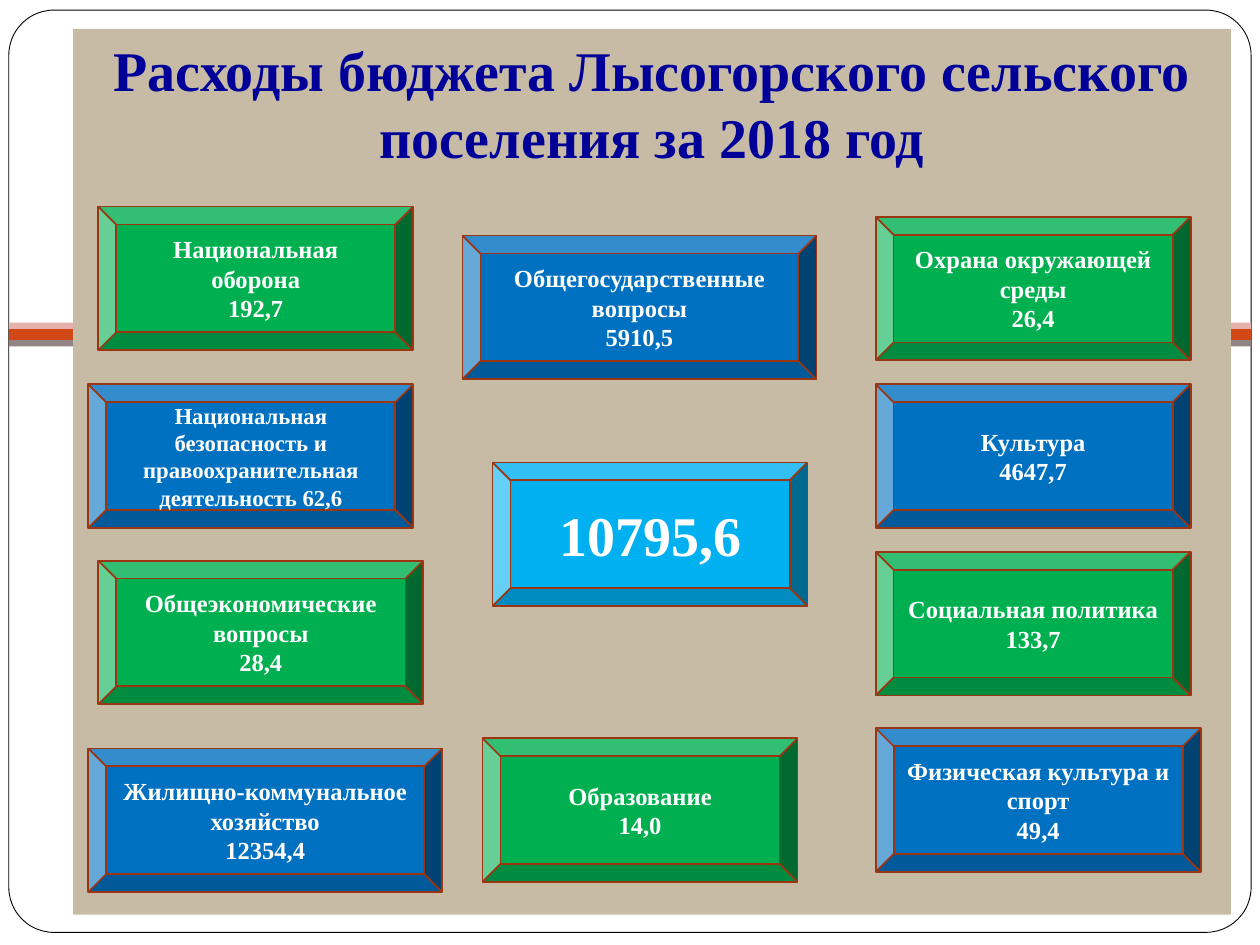
from pptx import Presentation
from pptx.dml.color import RGBColor
from pptx.enum.shapes import MSO_SHAPE
from pptx.enum.text import MSO_ANCHOR, PP_ALIGN
from pptx.util import Inches, Pt

GREEN, BLUE, SKY = "00B050", "0070C0", "00B0F0"
BEVEL_HEIGHT = 1.14
BEVELS = [
    (0.78, 1.64, 2.5, GREEN, 14, "Национальная оборона\n192,7"),
    (0.7, 3.05, 2.58, BLUE, 13,
     "Национальная безопасность и правоохранительная деятельность 62,6"),
    (0.78, 4.45, 2.58, GREEN, 14, "Общеэкономические вопросы\n28,4"),
    (0.7, 5.94, 2.81, BLUE, 14, "Жилищно-коммунальное хозяйство\n12354,4"),
    (3.91, 3.67, 2.5, SKY, 32, "10795,6"),
    (3.67, 1.87, 2.81, BLUE, 14, "Общегосударственные вопросы\n5910,5"),
    (6.95, 5.78, 2.58, BLUE, 14, "Физическая культура и спорт\n49,4"),
    (6.95, 4.38, 2.5, GREEN, 14, "Социальная политика\n133,7"),
    (6.95, 3.05, 2.5, BLUE, 14, "Культура\n4647,7"),
    (6.95, 1.72, 2.5, GREEN, 14, "Охрана окружающей среды\n26,4"),
    (3.83, 5.86, 2.5, GREEN, 14, "Образование\n14,0"),
]


def color(value):
    """Turn a hex string into a colour."""
    return RGBColor.from_string(value)


def add_box(slide, kind, box, fill, line=None, width=1):
    """Add a flat filled shape in a box of left, top, width, height."""
    shape = slide.shapes.add_shape(kind, *map(Inches, box))
    shape.shadow.inherit = False
    shape.fill.solid()
    shape.fill.fore_color.rgb = color(fill)
    if line:
        shape.line.color.rgb = color(line)
        shape.line.width = Pt(width)
    else:
        shape.line.fill.background()
    return shape


def set_text(shape, text, size, font_color, anchor):
    """Write bold centred text in a shape."""
    frame = shape.text_frame
    frame.word_wrap = True
    frame.vertical_anchor = anchor
    frame.text = text
    for para in frame.paragraphs:
        para.alignment = PP_ALIGN.CENTER
        for span in para.runs:
            span.font.name = "Times New Roman"
            span.font.size = Pt(size)
            span.font.bold = True
            span.font.color.rgb = color(font_color)


def add_frame(slide, box):
    """Draw the rounded border and the three stripes across it."""
    left, top, width, height = box
    border = add_box(slide, MSO_SHAPE.ROUNDED_RECTANGLE, box, "FFFFFF", "000000", 0.5)
    border.adjustments[0] = 0.049
    for offset, thickness, fill in [
        (2.52, 0.1, "D34817"), (2.48, 0.05, "E6B1AC"), (2.62, 0.05, "918485")
    ]:
        stripe = (left, top + offset, width, thickness)
        add_box(slide, MSO_SHAPE.RECTANGLE, stripe, fill)


def add_title_panel(slide, box, text):
    """Draw the beige panel with the title at its top."""
    panel = add_box(slide, MSO_SHAPE.RECTANGLE, box, "C7BBA6")
    set_text(panel, text, 32, "000099", MSO_ANCHOR.TOP)
    panel.text_frame.paragraphs[0].space_before = Pt(5.8)


def add_bevel(slide, box, fill, size, text):
    """Draw one bevelled budget item."""
    bevel = add_box(slide, MSO_SHAPE.BEVEL, box, fill, "9C3511")
    set_text(bevel, text, size, "FFFFFF", MSO_ANCHOR.MIDDLE)


def main():
    """Build and save the deck."""
    deck = Presentation()
    deck.slide_width, deck.slide_height = Inches(10), Inches(7.5)
    slide = deck.slides.add_slide(deck.slide_layouts[6])
    add_frame(slide, (0.07, 0.08, 9.86, 7.32))
    add_title_panel(slide, (0.58, 0.23, 9.19, 7.03),
                    "Расходы бюджета Лысогорского сельского поселения за 2018 год")
    for left, top, width, fill, size, text in BEVELS:
        add_bevel(slide, (left, top, width, BEVEL_HEIGHT), fill, size, text)
    deck.save("out.pptx")


if __name__ == "__main__":
    main()
